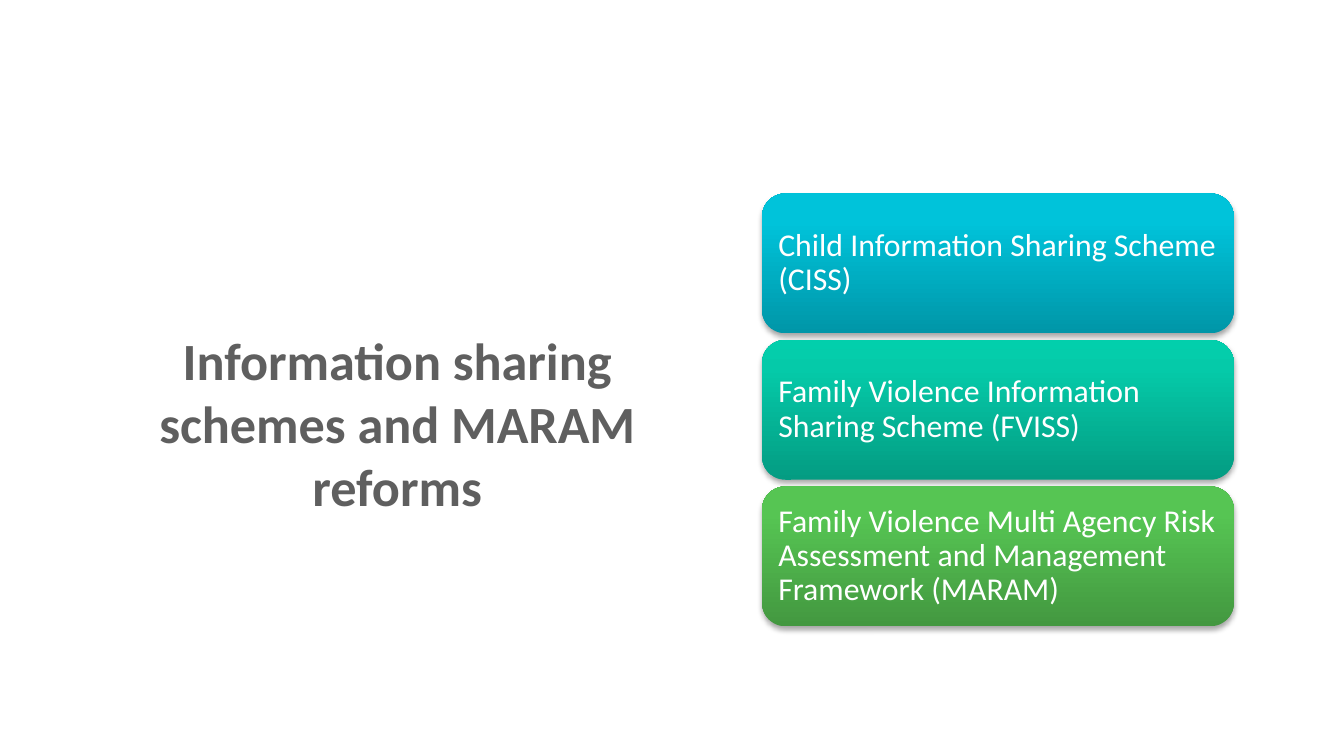
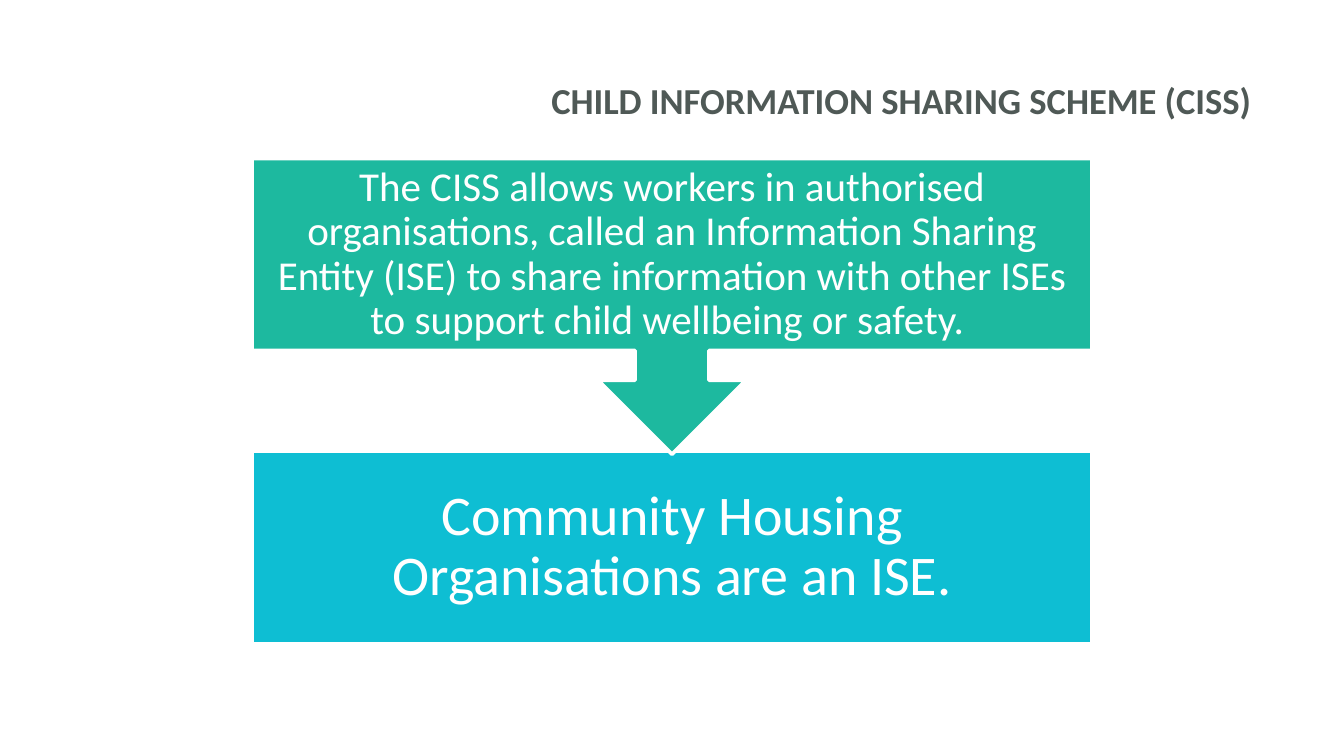
import pptx
import pptx.dml.color
import pptx.enum.shapes
import pptx.enum.text
import pptx.oxml
import pptx.oxml.ns
import pptx.util

Inches = pptx.util.Inches
Pt = pptx.util.Pt
SHAPE = pptx.enum.shapes.MSO_SHAPE
ALIGN = pptx.enum.text.PP_ALIGN
ANCHOR = pptx.enum.text.MSO_ANCHOR

SLIDE_WIDTH = 10
SLIDE_HEIGHT = SLIDE_WIDTH * 9 / 16
FONT = "Calibri"
WHITE = "FFFFFF"

REFORMS_TITLE = "Information sharing schemes and MARAM reforms"
# Text, then gradient colours from the bottom edge to the top edge
REFORMS = [
    ("Child Information Sharing Scheme (CISS)", ("0096A8", "00C3DA", "00C4DB")),
    ("Family Violence Information Sharing Scheme (FVISS)", ("049C82", "05CAA9", "02CFAC")),
    ("Family Violence Multi Agency Risk Assessment and Management Framework (MARAM)",
     ("439840", "56C553", "55C851")),
]
GRADIENT_STOPS = (0, 80, 100)
CARD_LEFT, CARD_WIDTH, CARD_HEIGHT = 5.67, 3.51, 1.04
CARDS_TOP, CARDS_BOTTOM = 1.44, 4.66

CISS_TITLE = "CHILD INFORMATION SHARING SCHEME (CISS)"
STEP_WIDTH = 6.25
STEP_LEFT = (SLIDE_WIDTH - STEP_WIDTH) / 2
# Shape, top, height, fill, text, size, inset; the callout lies over the box
STEPS = [
    (SHAPE.RECTANGLE, 3.36, 1.43, "0EBED3",
     "Community Housing Organisations are an ISE.", 30, 0.23),
    (SHAPE.DOWN_ARROW_CALLOUT, 1.18, 2.2, "1DB99F",
     "The CISS allows workers in authorised organisations, called an Information "
     "Sharing Entity (ISE) to share information with other ISEs to support child "
     "wellbeing or safety. ", 22, 0.17),
]


def rgb(color):
    return pptx.dml.color.RGBColor.from_string(color)


def write(sp, text, size, color=WHITE, align=ALIGN.CENTER, anchor=ANCHOR.MIDDLE,
          bold=False, spacing=1.0, inset=None):
    tf = sp.text_frame
    tf.word_wrap = True
    tf.vertical_anchor = anchor
    if inset is not None:
        for side in ("left", "top", "right", "bottom"):
            setattr(tf, f"margin_{side}", Inches(inset))
    p = tf.paragraphs[0]
    p.alignment = align
    p.line_spacing = spacing
    r = p.add_run()
    r.text = text
    for name, value in {"name": FONT, "size": Pt(size), "bold": bold}.items():
        setattr(r.font, name, value)
    r.font.color.rgb = rgb(color)


def add_title(s, box, text, size, color, **layout):
    sp = s.shapes.add_textbox(*map(Inches, box))
    write(sp, text, size, color, bold=True, **layout)


def add_shape(s, kind, *box):
    sp = s.shapes.add_shape(kind, *map(Inches, box))
    sp.shadow.inherit = False
    return sp


def shade(sp, colors):
    """Give a card its vertical gradient and soft shadow."""
    sp.fill.gradient()
    sp.fill.gradient_angle = 90
    ns = pptx.oxml.ns.nsdecls("a")
    spPr = sp._element.spPr
    stops = "".join(f'<a:gs pos="{pos * 1000}"><a:srgbClr val="{color}"/></a:gs>'
                    for pos, color in zip(GRADIENT_STOPS, colors))
    old = spPr.find(".//" + pptx.oxml.ns.qn("a:gsLst"))
    old.getparent().replace(old, pptx.oxml.parse_xml(f"<a:gsLst {ns}>{stops}</a:gsLst>"))
    spPr.find(pptx.oxml.ns.qn("a:effectLst")).append(pptx.oxml.parse_xml(
        f'<a:outerShdw {ns} blurRad="{Pt(3.1)}" dist="{Pt(1.8)}" dir="5400000" '
        'rotWithShape="0"><a:srgbClr val="000000"><a:alpha val="35000"/></a:srgbClr>'
        "</a:outerShdw>"))


def build_reforms(s):
    add_title(s, (0.67, 1.2, 4.57, 3.89), REFORMS_TITLE, 28, "5F5F5F")
    pitch = (CARDS_BOTTOM - CARDS_TOP - CARD_HEIGHT) / (len(REFORMS) - 1)
    for i, (text, colors) in enumerate(REFORMS):
        sp = add_shape(s, SHAPE.ROUNDED_RECTANGLE, CARD_LEFT, CARDS_TOP + i * pitch,
                       CARD_WIDTH, CARD_HEIGHT)
        sp.line.fill.background()
        shade(sp, colors)
        write(sp, text, 17, align=ALIGN.LEFT, spacing=0.9, inset=0.07)


def build_ciss(s):
    add_title(s, (3.82, 0.53, 5.59, 0.47), CISS_TITLE, 19.6, "4F5956",
              align=ALIGN.RIGHT, anchor=ANCHOR.TOP)
    for kind, top, height, color, text, size, inset in STEPS:
        sp = add_shape(s, kind, STEP_LEFT, top, STEP_WIDTH, height)
        sp.fill.solid()
        sp.fill.fore_color.rgb = rgb(color)
        sp.line.color.rgb = rgb(WHITE)
        sp.line.width = Pt(2)
        write(sp, text, size, spacing=0.9, inset=inset)


def main():
    prs = pptx.Presentation()
    prs.slide_width, prs.slide_height = Inches(SLIDE_WIDTH), Inches(SLIDE_HEIGHT)
    for build in (build_reforms, build_ciss):
        build(prs.slides.add_slide(prs.slide_layouts[6]))
    prs.save("out.pptx")


if __name__ == "__main__":
    main()
